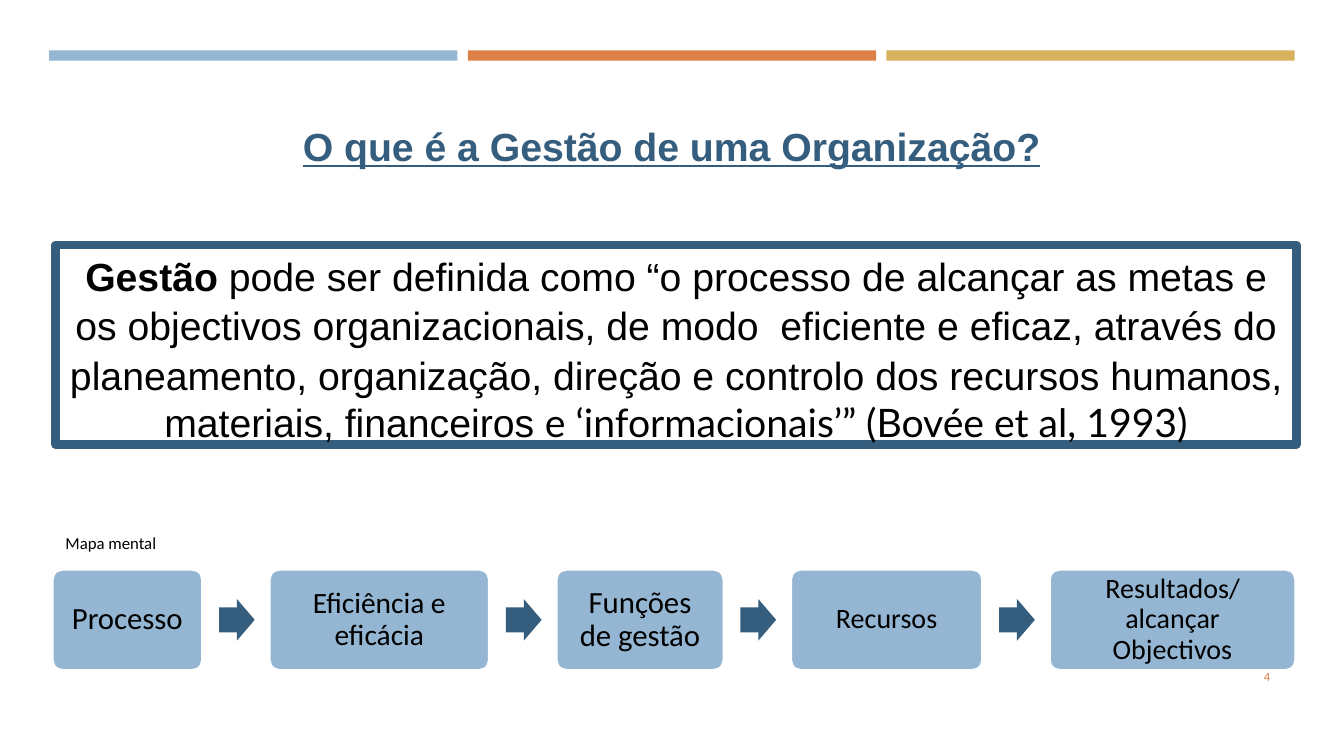
from dataclasses import dataclass

from pptx import Presentation
from pptx.dml.color import RGBColor
from pptx.enum.shapes import MSO_SHAPE
from pptx.enum.text import MSO_ANCHOR, PP_ALIGN
from pptx.shapes.autoshape import Shape
from pptx.slide import Slide
from pptx.util import Cm, Pt


@dataclass(frozen=True)
class Theme:
    blue: str = "94B6D2"
    orange: str = "DD8047"
    gold: str = "D8B25C"
    navy: str = "355D7E"
    black: str = "000000"
    white: str = "FFFFFF"
    heading_font: str = "Arial"
    body_font: str = "Calibri"
    citation_font: str = "Lato"
    heading_size: float = 28
    label_size: float = 12
    number_size: float = 9


@dataclass(frozen=True)
class Area:
    left: float
    top: float
    width: float
    height: float


@dataclass(frozen=True)
class Span:
    text: str
    size: float
    font: str
    color: str
    bold: bool = False
    underline: bool = False


@dataclass(frozen=True)
class Line:
    spans: tuple[Span, ...]
    align: PP_ALIGN = PP_ALIGN.CENTER
    spacing: float = 1.0


@dataclass(frozen=True)
class Stage:
    text: str
    width: float
    size: float


THEME = Theme()

BAR_COLORS = (THEME.blue, THEME.orange, THEME.gold)
BAR_LEFT, BAR_TOP, BAR_WIDTH, BAR_HEIGHT, BAR_STEP = 1.24, 1.27, 10.29, 0.26, 10.55

STAGES = (
    Stage("Processo", 3.78, 22),
    Stage("Eficiência e eficácia", 5.54, 21),
    Stage("Funções de gestão", 4.22, 22),
    Stage("Recursos", 4.83, 20),
    Stage("Resultados/alcançar Objectivos", 6.2, 20),
)
STAGE_LEFT, STAGE_TOP, STAGE_HEIGHT, STAGE_GAP = 1.32, 14.35, 2.54, 1.69
STAGE_INSET = 0.28
ARROW_WIDTH, ARROW_HEIGHT, ARROW_OFFSET = 0.9, 1.05, 0.42


def heading_span(text: str, color: str = THEME.black, bold: bool = False,
                 underline: bool = False, font: str = THEME.heading_font) -> Span:
    return Span(text, THEME.heading_size, font, color, bold, underline)


def add_block(slide: Slide, kind: MSO_SHAPE, area: Area, fill: str | None = None,
              line: str | None = None, line_width: float = 0) -> Shape:
    block = slide.shapes.add_shape(
        kind, Cm(area.left), Cm(area.top), Cm(area.width), Cm(area.height))
    block.shadow.inherit = False
    if fill:
        block.fill.solid()
        block.fill.fore_color.rgb = RGBColor.from_string(fill)
    else:
        block.fill.background()
    if line:
        block.line.color.rgb = RGBColor.from_string(line)
        block.line.width = Pt(line_width)
    else:
        block.line.fill.background()
    return block


def write(box: Shape, lines: tuple[Line, ...], anchor: MSO_ANCHOR = MSO_ANCHOR.TOP) -> None:
    frame = box.text_frame
    frame.word_wrap = True
    frame.vertical_anchor = anchor
    frame.text = "\n".join("" for _ in lines)
    for para, line in zip(frame.paragraphs, lines):
        para.alignment = line.align
        para.line_spacing = line.spacing
        for span in line.spans:
            run = para.add_run()
            run.text = span.text
            run.font.name = span.font
            run.font.size = Pt(span.size)
            run.font.bold = span.bold
            run.font.underline = span.underline
            run.font.color.rgb = RGBColor.from_string(span.color)


def add_text(slide: Slide, area: Area, line: Line,
             anchor: MSO_ANCHOR = MSO_ANCHOR.TOP) -> None:
    box = slide.shapes.add_textbox(
        Cm(area.left), Cm(area.top), Cm(area.width), Cm(area.height))
    write(box, (line,), anchor)


def add_bars(slide: Slide) -> None:
    for index, color in enumerate(BAR_COLORS):
        area = Area(BAR_LEFT + index * BAR_STEP, BAR_TOP, BAR_WIDTH, BAR_HEIGHT)
        add_block(slide, MSO_SHAPE.RECTANGLE, area, color)


def add_definition(slide: Slide) -> None:
    frame = add_block(slide, MSO_SHAPE.RECTANGLE, Area(1.4, 6.17, 31.27, 5.03),
                      line=THEME.navy, line_width=6)
    write(frame, (
        Line((
            heading_span("Gestão", bold=True),
            heading_span(" pode ser definida como “o processo de alcançar as metas e "
                         "os objectivos organizacionais, de modo  eficiente e eficaz, "
                         "através do planeamento, organização, direção e controlo dos "
                         "recursos humanos,"),
        ), spacing=1.05),
        Line((
            heading_span("materiais, financeiros "),
            heading_span("e ‘informacionais’” (Bovée et al, 1993)",
                         font=THEME.citation_font),
        )),
    ))


def add_stage(slide: Slide, stage: Stage, left: float) -> None:
    box = add_block(slide, MSO_SHAPE.ROUNDED_RECTANGLE,
                    Area(left, STAGE_TOP, stage.width, STAGE_HEIGHT),
                    THEME.blue, THEME.white, 1.75)
    box.adjustments[0] = 0.1
    frame = box.text_frame
    frame.margin_left = frame.margin_right = Cm(STAGE_INSET)
    frame.margin_top = frame.margin_bottom = Cm(STAGE_INSET)
    span = Span(stage.text, stage.size, THEME.body_font, THEME.black)
    write(box, (Line((span,), spacing=0.9),), MSO_ANCHOR.MIDDLE)


def add_flow(slide: Slide) -> None:
    left = STAGE_LEFT
    arrow_top = STAGE_TOP + (STAGE_HEIGHT - ARROW_HEIGHT) / 2
    for index, stage in enumerate(STAGES):
        if index:
            arrow = add_block(
                slide, MSO_SHAPE.RIGHT_ARROW,
                Area(left - STAGE_GAP + ARROW_OFFSET, arrow_top, ARROW_WIDTH, ARROW_HEIGHT),
                THEME.navy)
            arrow.adjustments[0] = 0.6
            arrow.adjustments[1] = 0.5
        add_stage(slide, stage, left)
        left += stage.width + STAGE_GAP


def main() -> None:
    deck = Presentation()
    deck.slide_width, deck.slide_height = Cm(33.87), Cm(19.05)
    page = deck.slides.add_slide(deck.slide_layouts[6])
    add_bars(page)
    number = Span("4", THEME.number_size, THEME.body_font, THEME.orange)
    add_text(page, Area(29.34, 16.54, 2.92, 1.02),
             Line((number,), PP_ALIGN.RIGHT), MSO_ANCHOR.MIDDLE)
    add_definition(page)
    title = heading_span("O que é a Gestão de uma Organização?", THEME.navy, True, True)
    add_text(page, Area(1.19, 2.9, 31.47, 2.24), Line((title,), spacing=1.05))
    add_flow(page)
    label = Span("Mapa mental", THEME.label_size, THEME.body_font, THEME.black)
    add_text(page, Area(1.4, 13.31, 5.94, 0.76), Line((label,), PP_ALIGN.LEFT))
    deck.save("out.pptx")


if __name__ == "__main__":
    main()
